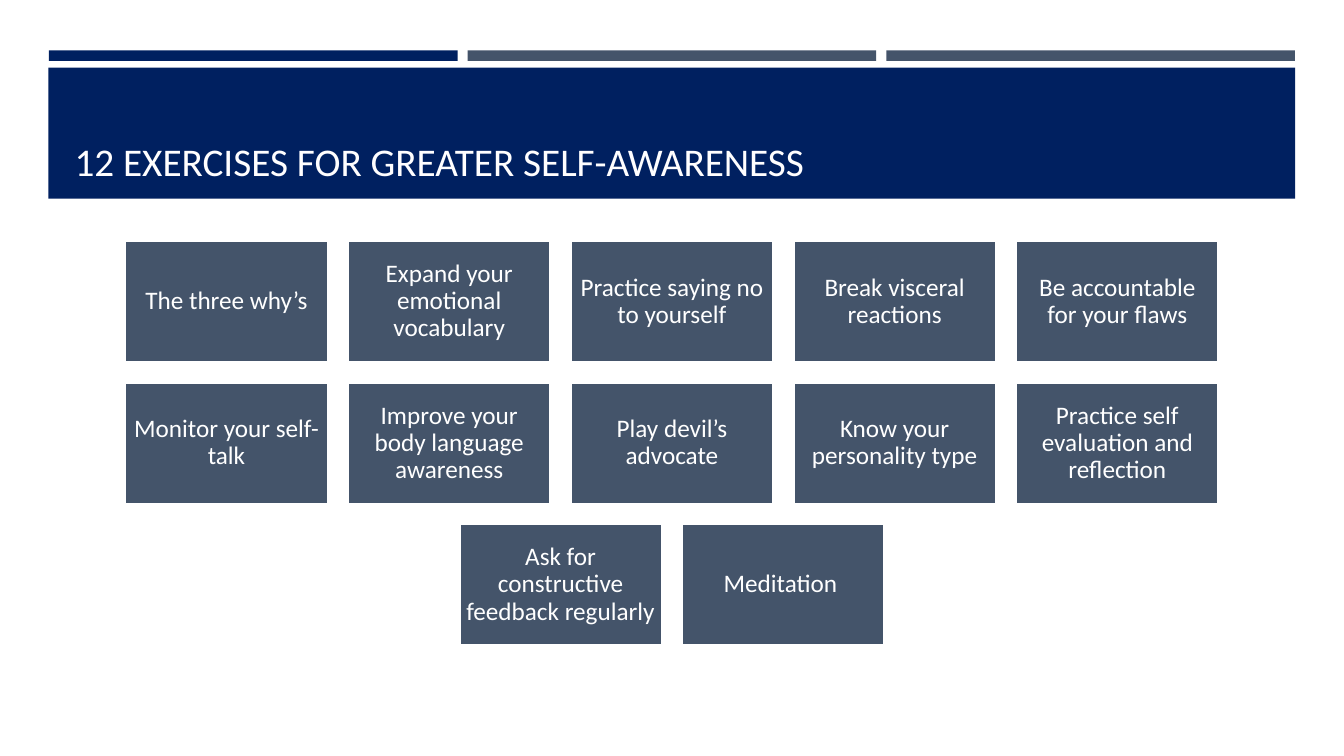
from pptx import Presentation
from pptx.dml.color import RGBColor
from pptx.enum import shapes, text
from pptx.util import Pt

NAVY, SLATE, WHITE, TITLE_WHITE = "002060", "44546A", "FFFFFF", "FFFEFF"
COLUMNS = 5
EXERCISES = [
    "The three why’s",
    "Expand your emotional vocabulary",
    "Practice saying no to yourself",
    "Break visceral reactions",
    "Be accountable for your flaws",
    "Monitor your self-talk",
    "Improve your body language awareness",
    "Play devil’s advocate",
    "Know your personality type",
    "Practice self evaluation and reflection",
    "Ask for constructive feedback regularly",
    "Meditation ",
]


def color(value):
    return RGBColor.from_string(value)


def write(sp, content, size=18, fill=WHITE, align=text.PP_ALIGN.CENTER,
          anchor=text.MSO_ANCHOR.MIDDLE, margins=(5, 5, 5, 5), spacing=0.9):
    tf = sp.text_frame
    tf.word_wrap = True
    tf.auto_size = text.MSO_AUTO_SIZE.NONE
    tf.vertical_anchor = anchor
    tf.margin_left, tf.margin_top, tf.margin_right, tf.margin_bottom = map(Pt, margins)
    p = tf.paragraphs[0]
    p.alignment = align
    p.line_spacing = spacing
    r = p.add_run()
    r.text = content
    r.font.name = "Calibri"
    r.font.size = Pt(size)
    r.font.color.rgb = color(fill)


def add_rect(s, x, y, w, h, fill, line=None):
    sp = s.shapes.add_shape(shapes.MSO_SHAPE.RECTANGLE, Pt(x), Pt(y), Pt(w), Pt(h))
    sp.shadow.inherit = False
    sp.fill.solid()
    sp.fill.fore_color.rgb = color(fill)
    if line:
        sp.line.color.rgb = color(line)
        sp.line.width = Pt(1.75)
    else:
        sp.line.fill.background()
    return sp


def add_accent_bars(s, x, y, w, h, gap=7.2):
    bar_w = (w - 2 * gap) / 3
    for i, fill in enumerate([NAVY, SLATE, SLATE]):
        add_rect(s, x + i * (bar_w + gap), y, bar_w, h, fill)


def add_title_band(s, x, y, w, h, content):
    add_rect(s, x, y, w, h, NAVY)
    title = s.shapes.title
    title.left, title.top = Pt(x + 11.5), Pt(y + 7)
    title.width, title.height = Pt(w - 22.5), Pt(h - 13.5)
    write(title, content, size=28, fill=TITLE_WHITE, align=text.PP_ALIGN.LEFT,
          anchor=text.MSO_ANCHOR.BOTTOM, margins=(7.2, 3.6, 7.2, 3.6), spacing=1.0)
    s.shapes.element.append(title.element)


def add_exercise_cards(s, x, y, w, h, gap=14.4):
    rows = [EXERCISES[i:i + COLUMNS] for i in range(0, len(EXERCISES), COLUMNS)]
    card_w = (w - (COLUMNS - 1) * gap) / COLUMNS
    card_h = (h - (len(rows) - 1) * gap) / len(rows)
    for i, row in enumerate(rows):
        row_w = len(row) * (card_w + gap) - gap
        for j, exercise in enumerate(row):
            card = add_rect(s, x + (w - row_w) / 2 + j * (card_w + gap),
                            y + i * (card_h + gap), card_w, card_h, SLATE, line=WHITE)
            write(card, exercise)


def main():
    prs = Presentation()
    prs.slide_width, prs.slide_height = Pt(960), Pt(540)
    s = prs.slides.add_slide(prs.slide_layouts[5])
    add_accent_bars(s, 35, 36, 890, 7.5)
    add_title_band(s, 34.6, 48.3, 890.6, 93.7, "12 EXERCISES FOR GREATER SELF-AWARENESS")
    add_exercise_cards(s, 89.5, 172, 781, 289)
    prs.save("out.pptx")


if __name__ == "__main__":
    main()
